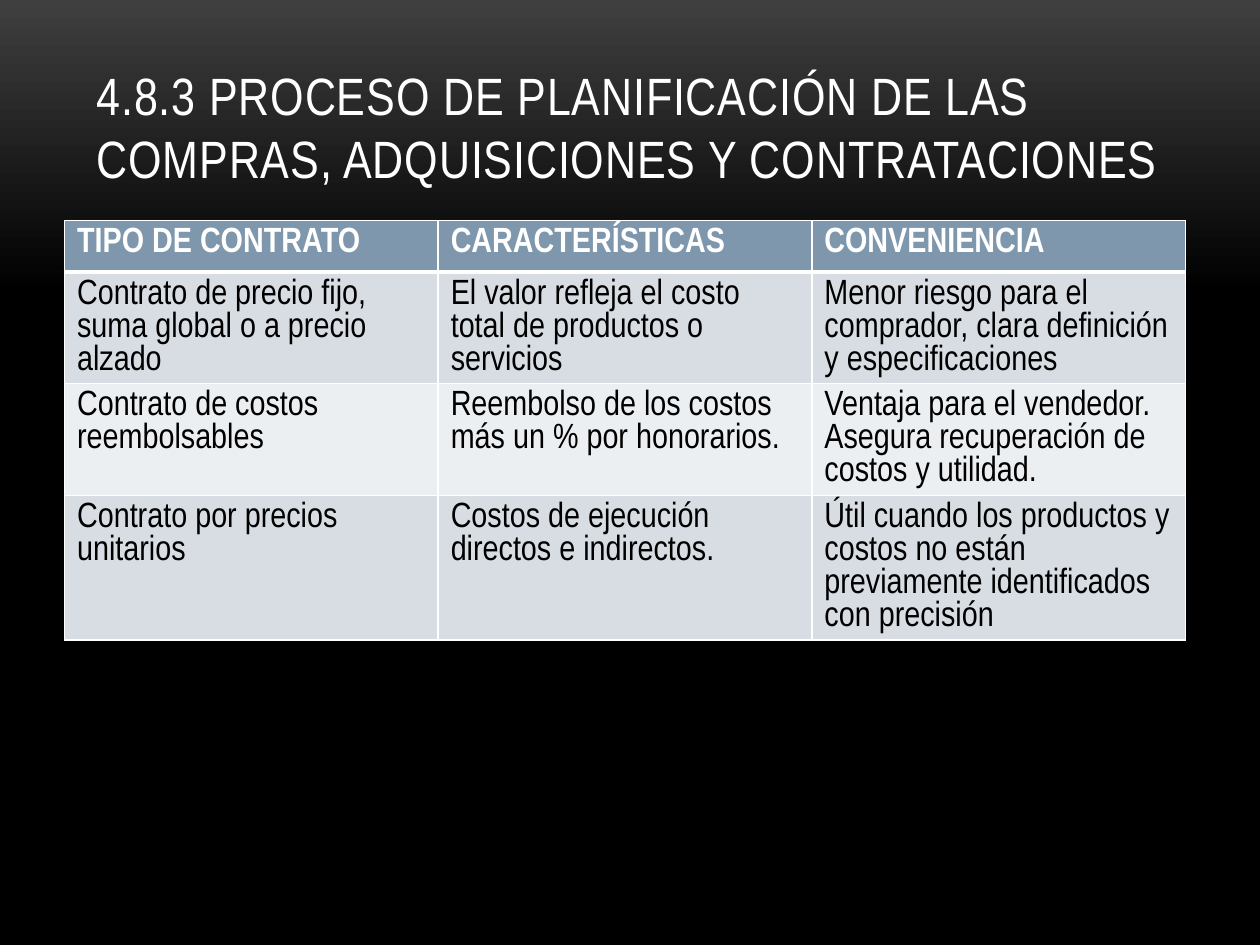
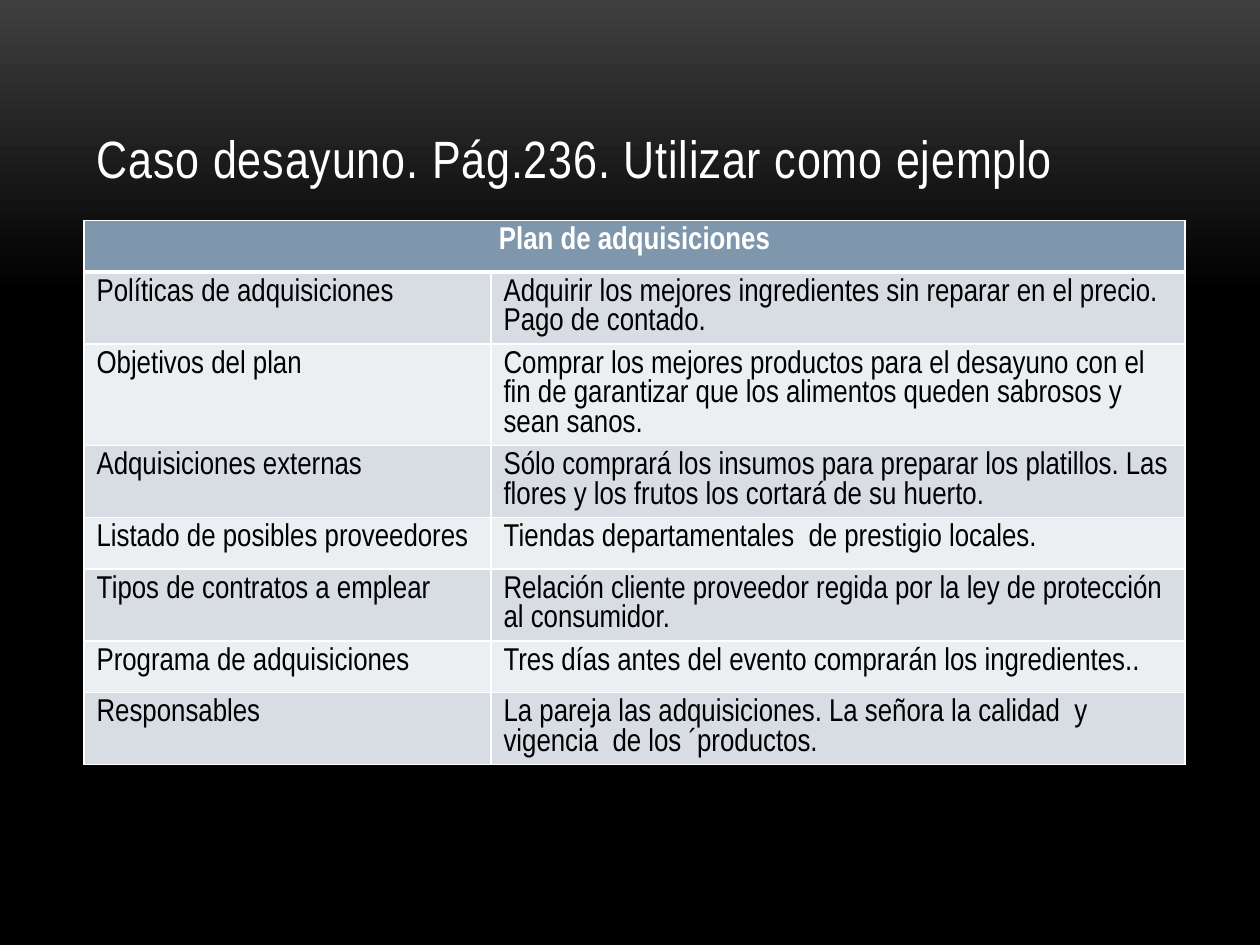
"""Build two slides about procurement planning, each with a title and a table."""
import copy
from dataclasses import dataclass

import lxml.etree
import pptx
import pptx.dml.color
import pptx.enum.text
import pptx.oxml.ns
import pptx.util

SLIDE_WIDTH = pptx.util.Inches(10)
SLIDE_HEIGHT = pptx.util.Inches(7.5)
FONT = "Arial Narrow"
COLORS = {
    "glow": "3F3F3F",
    "night": "000000",
    "light": "FFFFFF",
    "header": "7E97AD",
    "odd": "D8DDE3",
    "even": "ECEFF1",
}
MARGIN = 1 / 15
TITLE_TOP, TITLE_WIDTH, TITLE_HEIGHT = 0.04, 1 - 2 * MARGIN, 1 / 6
TABLE_TOP = 7 / 30
ROW_HEIGHT = pptx.util.Inches(0.41)
THIN, THICK = 1, 3


@dataclass(frozen=True)
class TableSlide:
    """Content of a slide; left and columns are shares of the slide width."""

    title: str
    left: float
    columns: tuple[float, ...]
    size: int
    header: tuple[str, ...]
    rows: tuple[tuple[str, ...], ...]


CONTRACTS = TableSlide(
    title="4.8.3 PROCESO DE PLANIFICACIÓN DE LAS COMPRAS, ADQUISICIONES Y CONTRATACIONES",
    left=0.0512,
    columns=(0.2966,) * 3,
    size=20,
    header=("TIPO DE CONTRATO", "CARACTERÍSTICAS", "CONVENIENCIA"),
    rows=(
        (
            "Contrato de precio fijo, suma global o a precio alzado",
            "El valor refleja el costo total de productos o servicios",
            "Menor riesgo para el comprador, clara definición y especificaciones",
        ),
        (
            "Contrato de costos reembolsables",
            "Reembolso de los costos más un % por honorarios.",
            "Ventaja para el vendedor. Asegura recuperación de costos y utilidad.",
        ),
        (
            "Contrato por precios unitarios",
            "Costos de ejecución directos e indirectos.",
            "Útil cuando los productos y costos no están previamente identificados con precisión",
        ),
    ),
)
BREAKFAST = TableSlide(
    title="Caso desayuno. Pág.236. Utilizar como ejemplo",
    left=MARGIN,
    columns=(0.323, 0.551),
    size=18,
    header=("Plan de adquisiciones",),
    rows=(
        (
            "Políticas de adquisiciones",
            "Adquirir los mejores ingredientes sin reparar en el precio.\nPago de contado.",
        ),
        (
            "Objetivos del plan",
            "Comprar los mejores productos para el desayuno con el fin de garantizar "
            "que los alimentos queden sabrosos y sean sanos.",
        ),
        (
            "Adquisiciones externas",
            "Sólo comprará los insumos para preparar los platillos. "
            "Las flores y los frutos los cortará de su huerto.",
        ),
        ("Listado de posibles proveedores", "Tiendas departamentales  de prestigio locales."),
        (
            "Tipos de contratos a emplear",
            "Relación cliente proveedor regida por la ley de protección al consumidor.",
        ),
        ("Programa de adquisiciones", "Tres días antes del evento comprarán los ingredientes.."),
        (
            "Responsables",
            "La pareja las adquisiciones. La señora la calidad  y vigencia  de los ´productos.",
        ),
    ),
)


def rgb(name: str) -> pptx.dml.color.RGBColor:
    """Return the named colour."""
    return pptx.dml.color.RGBColor.from_string(COLORS[name])


def write(
    text_frame,
    text: str,
    *,
    size: int,
    color: str,
    bold: bool = False,
    centered: bool = False,
    tracking: float = 0,
) -> None:
    """Put text, one paragraph a line, into a text frame and format it."""
    alignments = pptx.enum.text.PP_ALIGN
    text_frame.text = text
    for paragraph in text_frame.paragraphs:
        paragraph.alignment = alignments.CENTER if centered else alignments.LEFT
        for run in paragraph.runs:
            run.font.name = FONT
            run.font.size = pptx.util.Pt(size)
            run.font.bold = bold
            run.font.color.rgb = rgb(color)
            if tracking:
                run.font._element.set("spc", str(round(tracking * 100)))


def paint_background(master) -> None:
    """Give the slide master the gradient that all slides share."""
    fill = master.background.fill
    fill.gradient()
    fill.gradient_angle = 270
    stop_list = master.element.find(".//" + pptx.oxml.ns.qn("a:gsLst"))
    stop_list.append(copy.deepcopy(stop_list[-1]))
    stops = ((0, "glow"), (0.31, "night"), (1, "night"))
    for stop, (position, color) in zip(fill.gradient_stops, stops):
        stop.position = position
        stop.color.rgb = rgb(color)


def set_borders(cell, top: int, bottom: int) -> None:
    """Draw light borders round a cell, with widths in points."""
    properties = cell._tc.get_or_add_tcPr()
    qualify = pptx.oxml.ns.qn
    for side, width in (("L", THIN), ("R", THIN), ("T", top), ("B", bottom)):
        line = lxml.etree.SubElement(
            properties, qualify(f"a:ln{side}"), w=str(pptx.util.Pt(width))
        )
        fill = lxml.etree.SubElement(line, qualify("a:solidFill"))
        lxml.etree.SubElement(fill, qualify("a:srgbClr"), val=COLORS["light"])


def add_title(slide, text: str) -> None:
    """Place and format the title placeholder."""
    title = slide.shapes.title
    title.left, title.width = (round(SLIDE_WIDTH * x) for x in (MARGIN, TITLE_WIDTH))
    title.top, title.height = (round(SLIDE_HEIGHT * y) for y in (TITLE_TOP, TITLE_HEIGHT))
    frame = title.text_frame
    frame.word_wrap = True
    frame.auto_size = pptx.enum.text.MSO_AUTO_SIZE.NONE
    frame.vertical_anchor = pptx.enum.text.MSO_ANCHOR.BOTTOM
    write(frame, text, size=30, color="light", tracking=0.5)


def add_table(slide, content: TableSlide) -> None:
    """Draw the table; a single header cell spans all columns."""
    column_count = len(content.columns)
    spans = len(content.header) < column_count
    header = content.header + ("",) * (column_count - len(content.header))
    rows = (header, *content.rows)
    table = slide.shapes.add_table(
        len(rows),
        column_count,
        round(SLIDE_WIDTH * content.left),
        round(SLIDE_HEIGHT * TABLE_TOP),
        round(SLIDE_WIDTH * sum(content.columns)),
        ROW_HEIGHT * len(rows),
    ).table
    for column, share in zip(table.columns, content.columns):
        column.width = round(SLIDE_WIDTH * share)
    for row_index, texts in enumerate(rows):
        is_header = row_index == 0
        table.rows[row_index].height = ROW_HEIGHT
        fill_color = "header" if is_header else ("even", "odd")[row_index % 2]
        for column_index, text in enumerate(texts):
            cell = table.cell(row_index, column_index)
            set_borders(
                cell,
                top=THICK if row_index == 1 else THIN,
                bottom=THICK if is_header else THIN,
            )
            cell.fill.solid()
            cell.fill.fore_color.rgb = rgb(fill_color)
            write(
                cell.text_frame,
                text,
                size=content.size,
                color="light" if is_header else "night",
                bold=is_header,
                centered=is_header and spans,
            )
    if spans:
        table.cell(0, 0).merge(table.cell(0, column_count - 1))


def main() -> None:
    """Build and save the presentation."""
    presentation = pptx.Presentation()
    presentation.slide_width = SLIDE_WIDTH
    presentation.slide_height = SLIDE_HEIGHT
    paint_background(presentation.slide_master)
    title_only = presentation.slide_layouts.get_by_name("Title Only")
    for content in (CONTRACTS, BREAKFAST):
        slide = presentation.slides.add_slide(title_only)
        add_title(slide, content.title)
        add_table(slide, content)
    presentation.save("out.pptx")


if __name__ == "__main__":
    main()
